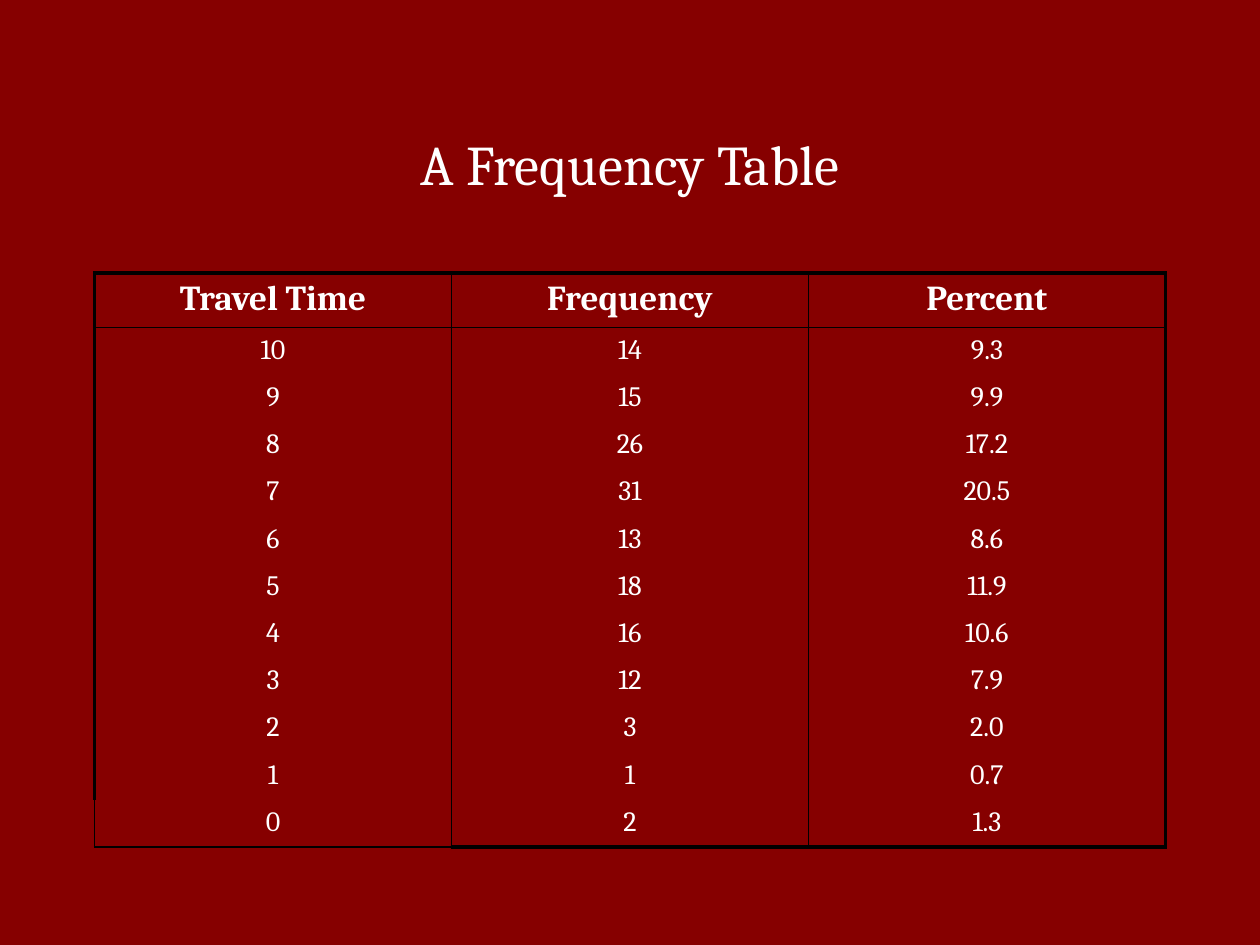
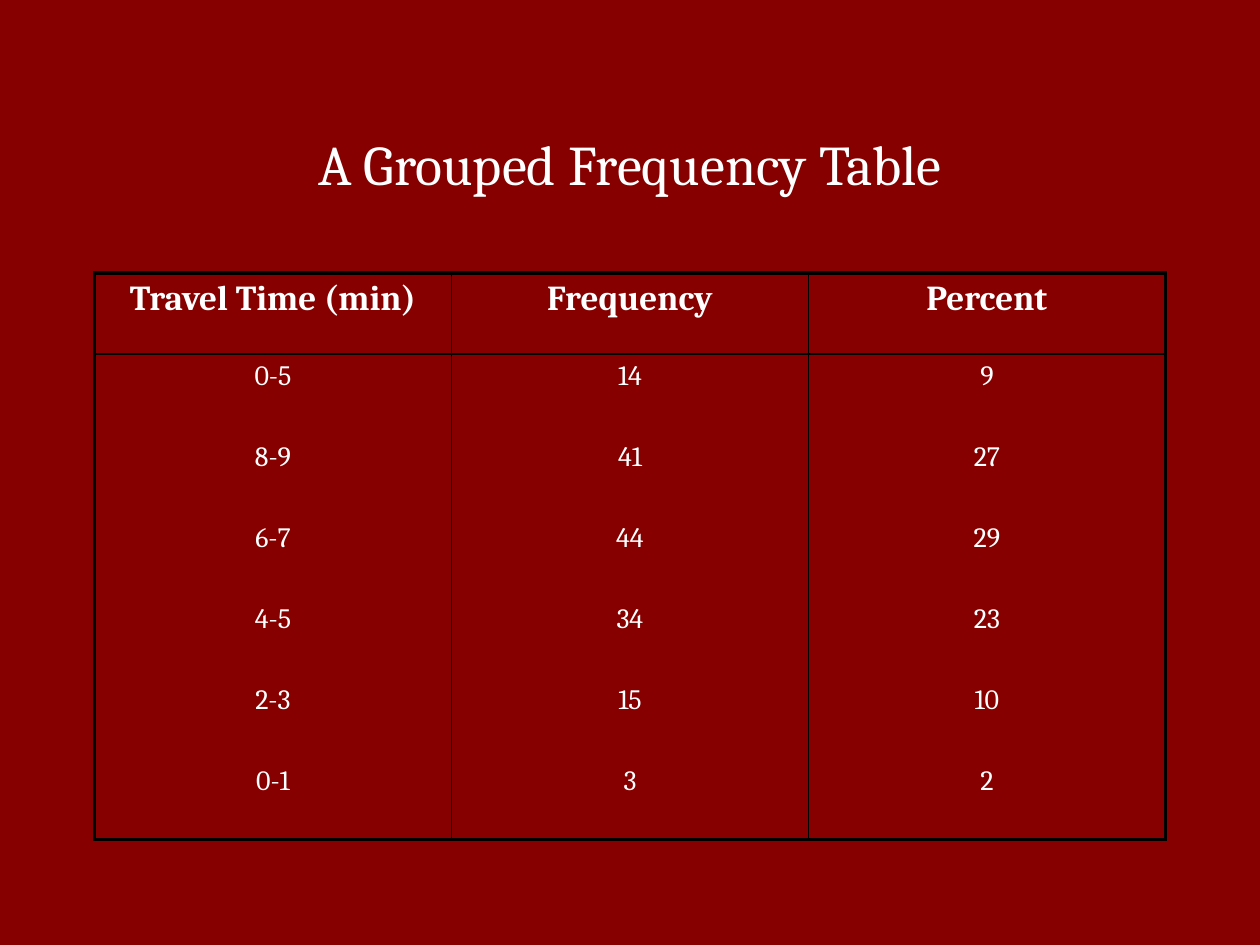
from dataclasses import dataclass

from lxml import etree
from pptx import Presentation
from pptx import util as u
from pptx.dml.color import RGBColor
from pptx.enum import text
from pptx.oxml import ns


@dataclass(frozen=True)
class Theme:
    background: str = "860000"
    ink: str = "FFFFFF"
    rule: str = "000000"
    font: str = "Cambria"
    title_size: float = 32
    header_size: float = 20
    body_size: float = 16
    space_before: int = 20  # percent of a line
    outer_rule: float = 2.25
    inner_rule: float = 1


@dataclass(frozen=True)
class Area:
    """A block of grid cells on the slide."""
    column: int
    row: int
    columns: int
    rows: int

    def box(self) -> tuple[int, int, int, int]:
        return (self.column * COLUMN, self.row * ROW,
                self.columns * COLUMN, self.rows * ROW)


@dataclass(frozen=True)
class FrequencySlide:
    title: str
    header: tuple[str, ...]
    records: tuple[tuple[str, ...], ...]
    light_corner: bool = False  # thin outer rules on the bottom left cell


THEME = Theme()
WIDTH, HEIGHT = u.Inches(10), u.Inches(7.5)
COLUMN, ROW = WIDTH // 40, HEIGHT // 90
TITLE_AREA = Area(3, 8, 34, 15)
TABLE_AREA = Area(3, 26, 34, 54)

SLIDES = (
    FrequencySlide(
        "A Frequency Table",
        ("Travel Time", "Frequency", "Percent"),
        (("10", "14", "9.3"), ("9", "15", "9.9"), ("8", "26", "17.2"),
         ("7", "31", "20.5"), ("6", "13", "8.6"), ("5", "18", "11.9"),
         ("4", "16", "10.6"), ("3", "12", "7.9"), ("2", "3", "2.0"),
         ("1", "1", "0.7"), ("0", "2", "1.3")),
        light_corner=True,
    ),
    FrequencySlide(
        "A Grouped Frequency Table",
        ("Travel Time (min)", "Frequency", "Percent"),
        (("0-5", "14", "9"), ("8-9", "41", "27"), ("6-7", "44", "29"),
         ("4-5", "34", "23"), ("2-3", "15", "10"), ("0-1", "3", "2")),
    ),
)


def write_centred(paragraph, wording: str, size: float, bold: bool = False) -> None:
    paragraph.alignment = text.PP_ALIGN.CENTER
    run = paragraph.add_run()
    run.text = wording
    run.font.name = THEME.font
    run.font.size = u.Pt(size)
    run.font.bold = bold
    run.font.color.rgb = RGBColor.from_string(THEME.ink)


def space_by_percent(paragraph) -> None:
    before = etree.SubElement(paragraph._p.get_or_add_pPr(), ns.qn("a:spcBef"))
    etree.SubElement(before, ns.qn("a:spcPct"), val=str(THEME.space_before * 1000))


def rule_cell(cell, widths: dict[str, float]) -> None:
    """Draw the cell's sides (L, R, T, B) in points; zero leaves a side open."""
    properties = cell._tc.get_or_add_tcPr()
    for side in "LRTB":
        width = widths[side]
        line = etree.SubElement(properties, ns.qn(f"a:ln{side}"), w=str(u.Pt(width)))
        if width:
            fill = etree.SubElement(line, ns.qn("a:solidFill"))
            etree.SubElement(fill, ns.qn("a:srgbClr"), val=THEME.rule)
        else:
            etree.SubElement(line, ns.qn("a:noFill"))


def side_widths(row: int, column: int, last_row: int, last_column: int,
                light_corner: bool) -> dict[str, float]:
    outer, inner = THEME.outer_rule, THEME.inner_rule
    corner = light_corner and (row, column) == (last_row, 0)
    edge = inner if corner else outer
    return {
        "L": edge if column == 0 else inner,
        "R": outer if column == last_column else inner,
        "T": {0: outer, 1: inner}.get(row, 0),
        "B": edge if row == last_row else inner if row == 0 else 0,
    }


def add_title(slide, wording: str) -> None:
    frame = slide.shapes.add_textbox(*TITLE_AREA.box()).text_frame
    frame.word_wrap = True
    frame.vertical_anchor = text.MSO_ANCHOR.MIDDLE
    write_centred(frame.paragraphs[0], wording, THEME.title_size)


def add_frequencies(slide, content: FrequencySlide) -> None:
    lines = (content.header, *content.records)
    last_row, last_column = len(lines) - 1, len(content.header) - 1
    table = slide.shapes.add_table(
        len(lines), len(content.header), *TABLE_AREA.box()).table
    table.first_row = table.horz_banding = False
    for row, line in enumerate(lines):
        is_header = row == 0
        size = THEME.header_size if is_header else THEME.body_size
        for column, value in enumerate(line):
            cell = table.cell(row, column)
            paragraph = cell.text_frame.paragraphs[0]
            write_centred(paragraph, value, size, is_header)
            space_by_percent(paragraph)
            rule_cell(cell, side_widths(row, column, last_row, last_column,
                                        content.light_corner))
            cell.fill.background()


def main() -> None:
    deck = Presentation()
    deck.slide_width, deck.slide_height = WIDTH, HEIGHT
    for content in SLIDES:
        slide = deck.slides.add_slide(deck.slide_layouts[6])
        slide.background.fill.solid()
        slide.background.fill.fore_color.rgb = RGBColor.from_string(THEME.background)
        add_title(slide, content.title)
        add_frequencies(slide, content)
    deck.save("out.pptx")


if __name__ == "__main__":
    main()
